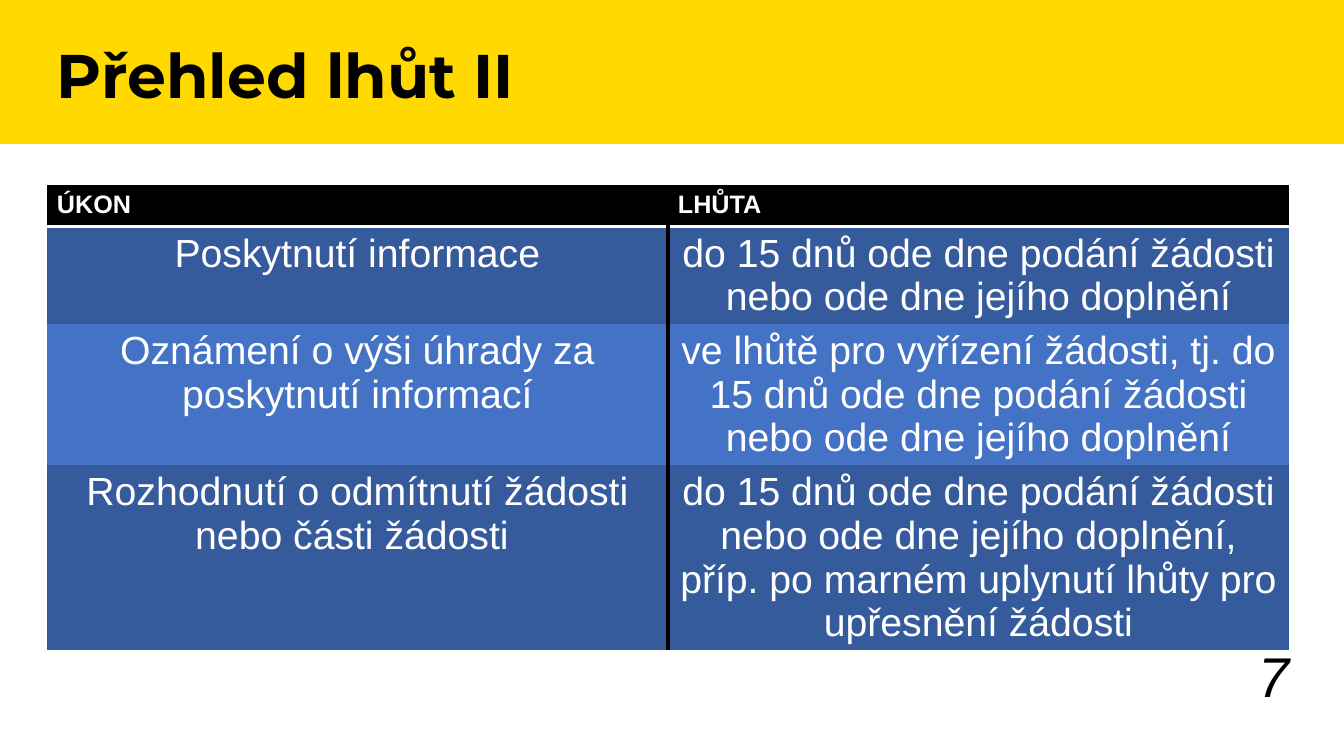
"""Build the slide with an overview of deadlines for information requests."""
import pptx
import pptx.dml.color
import pptx.enum.shapes
import pptx.enum.text
import pptx.oxml
import pptx.oxml.ns
import pptx.util

Cm = pptx.util.Cm
Pt = pptx.util.Pt
RGBColor = pptx.dml.color.RGBColor
ALIGN = pptx.enum.text.PP_ALIGN
ANCHOR = pptx.enum.text.MSO_ANCHOR

YELLOW = RGBColor(0xFF, 0xD9, 0x00)
BLACK = RGBColor(0x00, 0x00, 0x00)
WHITE = RGBColor(0xFF, 0xFF, 0xFF)
DARK_BLUE = RGBColor(0x36, 0x5B, 0x9D)
BLUE = RGBColor(0x44, 0x72, 0xC4)
PLAIN_TABLE_STYLE = "{2D5ABB26-0587-4C30-8999-92F81FD0307C}"

HEADER = ("ÚKON", "LHŮTA")
DEADLINES = [
    ("Poskytnutí informace",
     "do 15 dnů ode dne podání žádosti nebo ode dne jejího doplnění"),
    ("Oznámení o výši úhrady za poskytnutí informací",
     "ve lhůtě pro vyřízení žádosti, tj. do 15 dnů ode dne podání žádosti "
     "nebo ode dne jejího doplnění"),
    ("Rozhodnutí o odmítnutí žádosti nebo části žádosti ",
     "do 15 dnů ode dne podání žádosti nebo ode dne jejího doplnění, "
     "příp. po marném uplynutí lhůty pro upřesnění žádosti"),
]
ROW_HEIGHTS = (1.04, 2.45, 3.55, 4.65)


class SlideBuilder:
    body_font = "Arial"
    title_font = "Montserrat"

    def __init__(self, presentation):
        self.slide = presentation.slides.add_slide(presentation.slide_layouts[6])

    def add_words(self, frame, text, size, color, align=ALIGN.LEFT, font=None,
                  bold=False, italic=False):
        paragraph = frame.paragraphs[0]
        paragraph.alignment = align
        run = paragraph.add_run()
        run.text = text
        run.font.name = font or self.body_font
        run.font.size = Pt(size)
        run.font.bold = bold
        run.font.italic = italic
        run.font.color.rgb = color
        return paragraph

    def band(self, left, top, width, height, color):
        shape = self.slide.shapes.add_shape(
            pptx.enum.shapes.MSO_SHAPE.RECTANGLE,
            Cm(left), Cm(top), Cm(width), Cm(height))
        shape.shadow.inherit = False
        shape.fill.solid()
        shape.fill.fore_color.rgb = color
        shape.line.fill.background()

    def text(self, left, top, width, height, text, size, anchor=ANCHOR.TOP, **style):
        box = self.slide.shapes.add_textbox(Cm(left), Cm(top), Cm(width), Cm(height))
        frame = box.text_frame
        frame.word_wrap = True
        frame.vertical_anchor = anchor
        return self.add_words(frame, text, size, BLACK, **style)

    def border(self, cell, side, color, width):
        line = pptx.oxml.parse_xml(
            f'<a:ln{side} {pptx.oxml.ns.nsdecls("a")} w="{Pt(width)}">'
            f'<a:solidFill><a:srgbClr val="{color}"/></a:solidFill></a:ln{side}>')
        cell._tc.get_or_add_tcPr().insert(0, line)

    def cell(self, cell, text, size, fill, **style):
        cell.fill.solid()
        cell.fill.fore_color.rgb = fill
        self.add_words(cell.text_frame, text, size, WHITE, **style)

    def table(self, left, top, width, heights, header, rows):
        frame = self.slide.shapes.add_table(
            len(heights), len(header), Cm(left), Cm(top), Cm(width), Cm(sum(heights)))
        table = frame.table
        table._tbl.tblPr.find(pptx.oxml.ns.qn("a:tableStyleId")).text = PLAIN_TABLE_STYLE
        for row, height in zip(table.rows, heights):
            row.height = Cm(height)
        for column, text in enumerate(header):
            cell = table.cell(0, column)
            self.cell(cell, text, 18, BLACK, bold=True)
            self.border(cell, "B", WHITE, 2)
        for number, texts in enumerate(rows, 1):
            fill = DARK_BLUE if number % 2 else BLUE
            for column, (text, side) in enumerate(zip(texts, "RL")):
                cell = table.cell(number, column)
                self.cell(cell, text, 28, fill, align=ALIGN.CENTER)
                self.border(cell, side, BLACK, 3)


def main():
    presentation = pptx.Presentation()
    presentation.slide_width = Cm(33.87)
    presentation.slide_height = Cm(19.05)
    builder = SlideBuilder(presentation)
    builder.band(0, 0, 33.87, 3.63, YELLOW)
    builder.table(1.18, 4.67, 31.3, ROW_HEIGHTS, HEADER, DEADLINES)
    builder.text(25.12, 16.54, 7.62, 1.45, "7", 40, ANCHOR.BOTTOM,
                 align=ALIGN.RIGHT, italic=True)
    title = builder.text(1.18, 1.02, 31.3, 2.59, "Přehled lhůt II", 44,
                         font=builder.title_font, bold=True)
    title.line_spacing = 0.9
    presentation.save("out.pptx")


if __name__ == "__main__":
    main()
